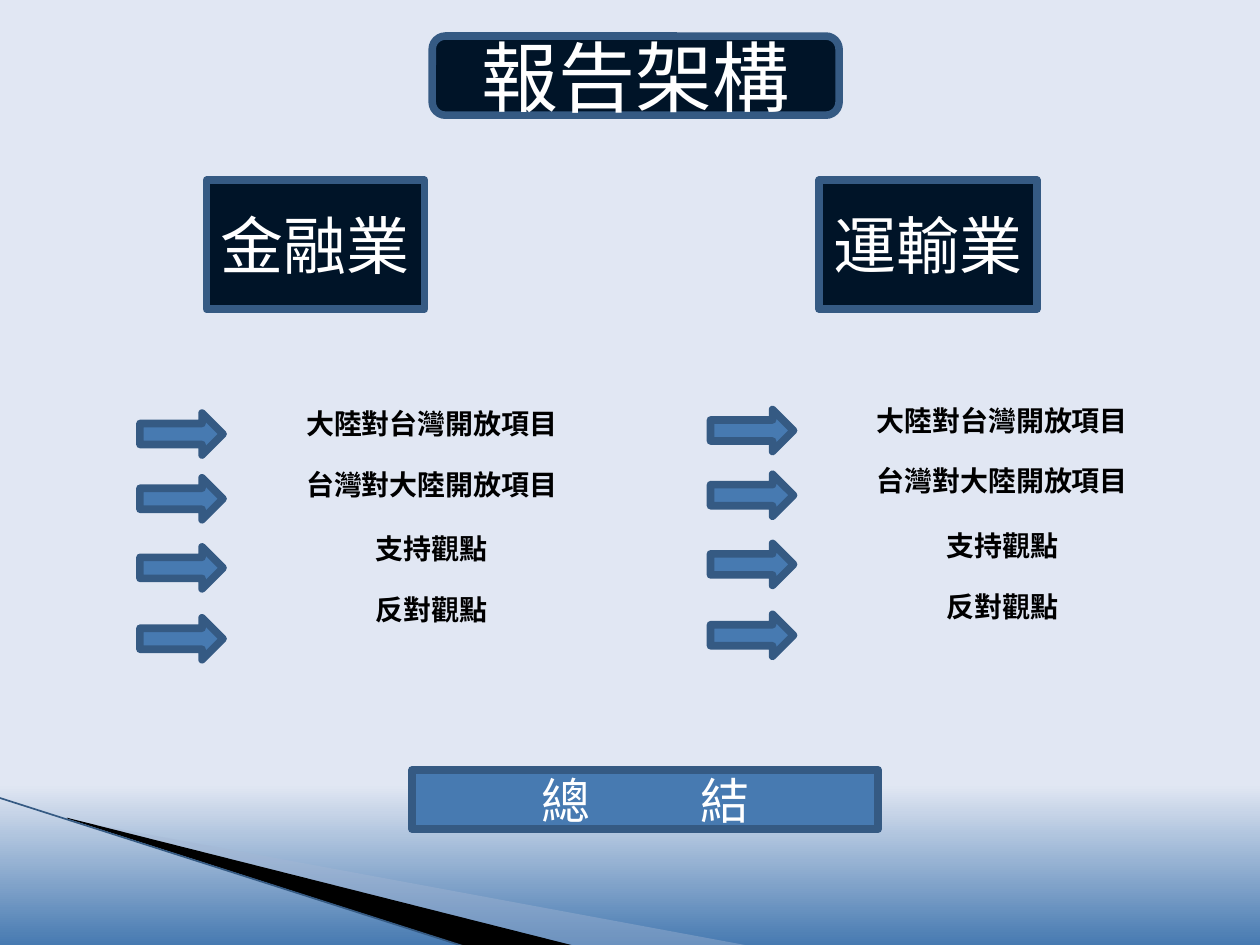
from lxml import etree
from pptx import Presentation
from pptx.dml.color import RGBColor
from pptx.enum.shapes import MSO_CONNECTOR, MSO_SHAPE
from pptx.enum.text import MSO_ANCHOR, PP_ALIGN
from pptx.oxml.ns import qn
from pptx.util import Pt

ROUNDED = MSO_SHAPE.ROUNDED_RECTANGLE
RECTANGLE = MSO_SHAPE.RECTANGLE
ARROW = MSO_SHAPE.RIGHT_ARROW
STRAIGHT = MSO_CONNECTOR.STRAIGHT
CENTER = PP_ALIGN.CENTER
MIDDLE = MSO_ANCHOR.MIDDLE

CJK_FONT = "Noto Sans CJK JP"
MONO_FONT = "DejaVu Sans Mono"
COLORS = {
    "sky": "E1E7F3", "blue": "477AB1", "border": "355A83", "navy": "001428",
    "white": "FFFFFF", "black": "000000", "ray": "A5B7D4",
}
TOPICS = ["大陸對台灣開放項目", "台灣對大陸開放項目", "支持觀點", "反對觀點"]
TOPIC_GAPS = [0, 17.5, 19.5, 17.5]
ARROW_TOPS = [5, 42, 81.5, 122]


def color(name):
    return RGBColor.from_string(COLORS[name])


def format_run(run, size, color_name, bold=False, latin=CJK_FONT):
    run.font.size = Pt(size)
    run.font.bold = bold
    run.font.color.rgb = color(color_name)
    run.font.name = latin
    east_asian = etree.SubElement(run._r.get_or_add_rPr(), qn("a:ea"))
    east_asian.set("typeface", CJK_FONT)


def add_block(slide, kind, box, fill):
    shape = slide.shapes.add_shape(kind, *(Pt(length) for length in box))
    shape.shadow.inherit = False
    shape.fill.solid()
    shape.fill.fore_color.rgb = color(fill)
    shape.line.color.rgb = color("border")
    shape.line.width = Pt(4.33)
    return shape


def add_heading(slide, kind, box, text, size):
    shape = add_block(slide, kind, box, "navy")
    frame = shape.text_frame
    frame.text = text
    frame.vertical_anchor = MIDDLE
    frame.paragraphs[0].alignment = CENTER
    format_run(frame.paragraphs[0].runs[0], size, "white")


def add_topics(slide, left, top):
    """Four arrows with their topics to the right."""
    for offset in ARROW_TOPS:
        add_block(slide, ARROW, (left, top + offset, 47.5, 24), "blue")
    text_box = slide.shapes.add_textbox(Pt(left + 62), Pt(top), Pt(209.5), Pt(145.5))
    frame = text_box.text_frame
    frame.word_wrap = True
    frame.text = "\n".join(TOPICS)
    for paragraph, gap in zip(frame.paragraphs, TOPIC_GAPS):
        paragraph.alignment = CENTER
        paragraph.line_spacing = 0.9
        paragraph.space_before = Pt(gap)
        format_run(paragraph.runs[0], 16, "black", bold=True)


def add_summary(slide, box):
    shape = add_block(slide, RECTANGLE, box, "blue")
    shape.text_frame.vertical_anchor = MIDDLE
    paragraph = shape.text_frame.paragraphs[0]
    paragraph.alignment = CENTER
    for text in ("總 ", "結"):
        run = paragraph.add_run()
        run.text = text
        format_run(run, 28, "white", latin=MONO_FONT)
    # Letter spacing holds the two characters apart
    paragraph.runs[0]._r.get_or_add_rPr().set("spc", "2820")


def add_ray(slide, points, fill, opacity=100):
    points = [(Pt(x), Pt(y)) for x, y in points]
    builder = slide.shapes.build_freeform(*points[0])
    builder.add_line_segments(points[1:], close=True)
    shape = builder.convert_to_shape()
    shape.shadow.inherit = False
    shape.fill.solid()
    shape.fill.fore_color.rgb = color(fill)
    shape.line.fill.background()
    if opacity < 100:
        fill_color = shape._element.spPr.find(f".//{qn('a:srgbClr')}")
        etree.SubElement(fill_color, qn("a:alpha")).set("val", str(opacity * 1000))


def add_backdrop(slide):
    # Sky gradient, top to bottom
    fill = slide.background.fill
    fill.gradient()
    fill.gradient_angle = 270
    for stop, position, name in zip(fill.gradient_stops, (0.83, 1), ("sky", "blue")):
        stop.position = position
        stop.color.rgb = color(name)
    # Rays in the lower left corner
    add_ray(slide, [(39.6, 468.5), (428.4, 540.5), (328.3, 540.5), (39.6, 468)], "ray", 40)
    add_ray(slide, [(38.2, 467.3), (329, 540.7), (267.8, 541.4), (38.9, 468)], "black")
    edge = slide.shapes.add_connector(STRAIGHT, Pt(-0.7), Pt(455.8), Pt(267.1), Pt(541.4))
    edge.line.color.rgb = color("border")
    edge.line.width = Pt(0.95)
    etree.SubElement(edge._element.spPr, qn("a:effectLst"))


def main():
    presentation = Presentation()
    presentation.slide_width, presentation.slide_height = Pt(720), Pt(540)
    slide = presentation.slides.add_slide(presentation.slide_layouts[6])
    add_backdrop(slide)
    add_heading(slide, ROUNDED, (247, 20.6, 232.5, 45.2), "報告架構", 44)
    # One column for each industry
    add_heading(slide, RECTANGLE, (118, 103, 124.6, 73.6), "金融業", 36)
    add_heading(slide, RECTANGLE, (468, 103, 124.6, 73.6), "運輸業", 36)
    add_topics(slide, 80, 231)
    add_topics(slide, 406, 229)
    add_summary(slide, (235.5, 440, 266.4, 33.8))
    presentation.save("out.pptx")


if __name__ == "__main__":
    main()
